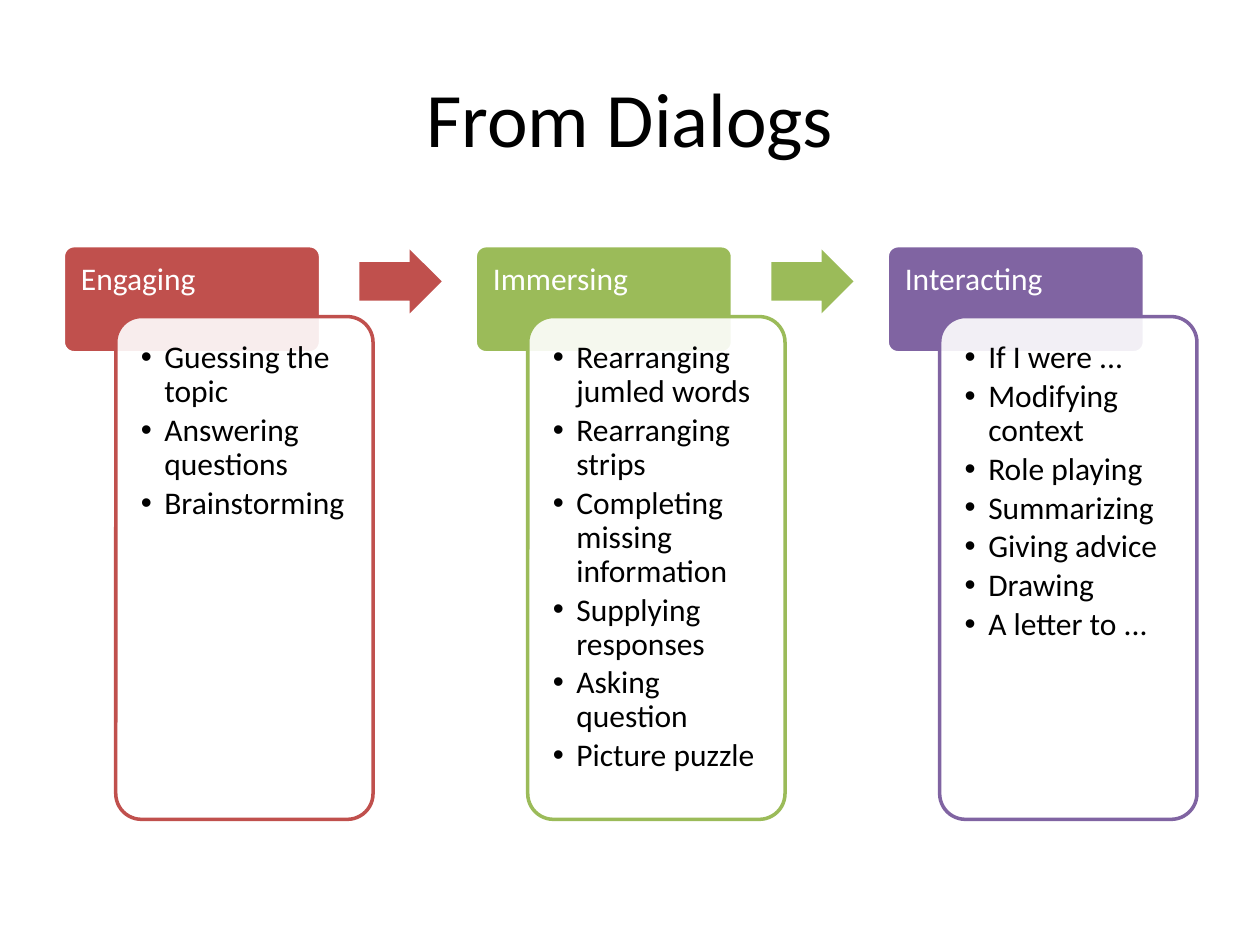
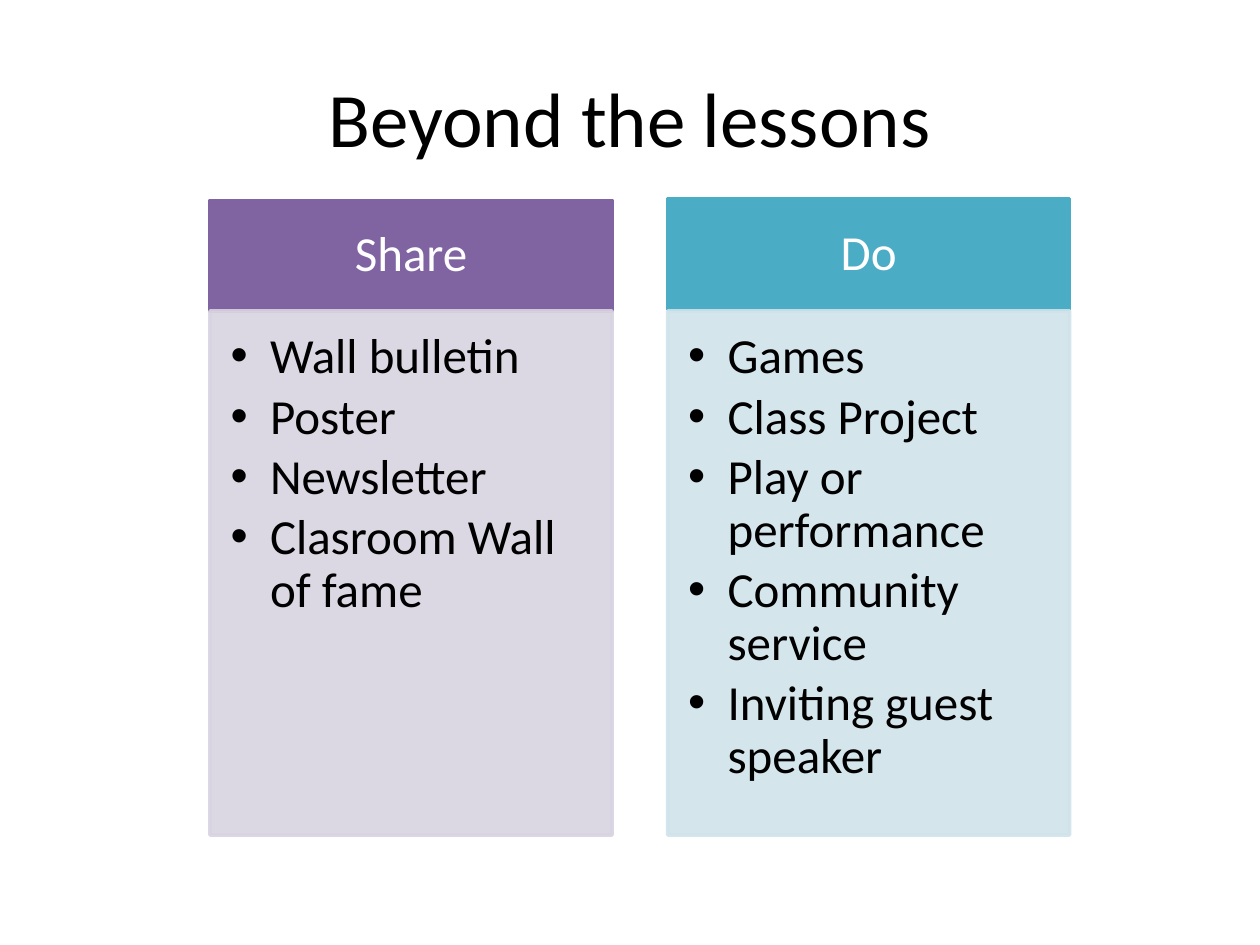
from dataclasses import dataclass
from typing import Optional

from lxml import etree
from pptx import Presentation
from pptx.dml.color import RGBColor
from pptx.enum.shapes import MSO_SHAPE
from pptx.enum.text import MSO_ANCHOR, PP_ALIGN
from pptx.oxml.ns import qn
from pptx.util import Pt

RECT = MSO_SHAPE.RECTANGLE
ROUND_RECT = MSO_SHAPE.ROUNDED_RECTANGLE
RIGHT_ARROW = MSO_SHAPE.RIGHT_ARROW
LEFT, CENTER = PP_ALIGN.LEFT, PP_ALIGN.CENTER
TOP, MIDDLE = MSO_ANCHOR.TOP, MSO_ANCHOR.MIDDLE


@dataclass(frozen=True)
class Theme:
    font: str = "Calibri"
    black: str = "000000"
    white: str = "FFFFFF"
    red: str = "C0504D"
    green: str = "9BBB59"
    purple: str = "8064A2"
    teal: str = "4BACC6"
    pale_purple: str = "D8D3E0"
    pale_teal: str = "D0E3EA"
    title_size: int = 44
    stage_size: int = 18
    list_size: int = 28
    line_width: int = 2
    opacity: int = 90


THEME = Theme()


@dataclass(frozen=True)
class Box:
    x: float
    y: float
    w: float
    h: float

    def lengths(self):
        return Pt(self.x), Pt(self.y), Pt(self.w), Pt(self.h)


@dataclass(frozen=True)
class Stage:
    name: str
    color: str
    items: list[str]


@dataclass(frozen=True)
class Panel:
    name: str
    color: str
    pale: str
    top: float
    items: list[str]


STAGES = [
    Stage("Engaging", THEME.red,
          ["Guessing the topic", "Answering questions", "Brainstorming"]),
    Stage("Immersing", THEME.green,
          ["Rearranging jumled words", "Rearranging strips",
           "Completing missing information", "Supplying responses",
           "Asking question", "Picture puzzle"]),
    Stage("Interacting", THEME.purple,
          ["If I were ...", "Modifying context", "Role playing", "Summarizing",
           "Giving advice", "Drawing", "A letter to ..."]),
]

PANELS = [
    Panel("Share", THEME.purple, THEME.pale_purple, 114.5,
          ["Wall bulletin", "Poster", "Newsletter", "Clasroom Wall of fame"]),
    Panel("Do", THEME.teal, THEME.pale_teal, 113.5,
          ["Games", "Class Project", "Play or performance",
           "Community service", "Inviting guest speaker"]),
]


def set_opacity(fill, percent: int) -> None:
    color = fill._xPr.find(qn("a:solidFill"))[0]
    etree.SubElement(color, qn("a:alpha"), val=str(percent * 1000))


def add_bullet(p, indent: float) -> None:
    pPr = p._p.get_or_add_pPr()
    pPr.set("marL", str(Pt(indent)))
    pPr.set("indent", str(-Pt(indent)))
    etree.SubElement(pPr, qn("a:buFont"), typeface="Arial")
    etree.SubElement(pPr, qn("a:buChar"), char="•")


def write(sp, lines: list[str], *, size: int, color: str = THEME.black,
          align=LEFT, anchor=TOP, insets=(7.2, 3.6, 7.2, 3.6),
          spacing: float = 0.9, after: float = 0, indent: float = 0) -> None:
    tf = sp.text_frame
    tf.word_wrap = True
    tf.vertical_anchor = anchor
    tf.margin_left, tf.margin_top, tf.margin_right, tf.margin_bottom = map(Pt, insets)
    for i, line in enumerate(lines):
        p = tf.add_paragraph() if i else tf.paragraphs[0]
        p.alignment = align
        p.line_spacing = spacing
        p.space_after = Pt(after)
        if indent:
            add_bullet(p, indent)
        r = p.add_run()
        r.text = line
        r.font.name = THEME.font
        r.font.size = Pt(size)
        r.font.color.rgb = RGBColor.from_string(color)


def add_box(s, kind, box: Box, fill: str, line: Optional[str] = None, *,
            adjustments=(), fill_opacity: int = 100, line_opacity: int = 100):
    sp = s.shapes.add_shape(kind, *box.lengths())
    sp.shadow.inherit = False
    for i, value in enumerate(adjustments):
        sp.adjustments[i] = value
    sp.fill.solid()
    sp.fill.fore_color.rgb = RGBColor.from_string(fill)
    if fill_opacity < 100:
        set_opacity(sp.fill, fill_opacity)
    if line is None:
        sp.line.fill.background()
        return sp
    sp.line.width = Pt(THEME.line_width)
    sp.line.color.rgb = RGBColor.from_string(line)
    if line_opacity < 100:
        color = sp.line._ln.find(qn("a:solidFill"))[0]
        etree.SubElement(color, qn("a:alpha"), val=str(line_opacity * 1000))
    return sp


def add_titled_slide(prs, title: str):
    s = prs.slides.add_slide(prs.slide_layouts[6])
    sp = s.shapes.add_textbox(*Box(36, 21.6, 648, 90).lengths())
    write(sp, [title], size=THEME.title_size, align=CENTER, anchor=MIDDLE, spacing=1)
    return s


def draw_stage(s, stage: Stage, x: float, has_next: bool) -> None:
    head = add_box(s, ROUND_RECT, Box(x, 140.4, 147, 61.2), stage.color,
                   THEME.white, adjustments=[0.1])
    write(head, [stage.name], size=THEME.stage_size, color=THEME.white,
          insets=(8.3, 8.3, 8.3, 5))
    body = add_box(s, ROUND_RECT, Box(x + 30, 180.9, 147, 287.3), THEME.white,
                   stage.color, adjustments=[0.1], fill_opacity=THEME.opacity)
    write(body, stage.items, size=THEME.stage_size, insets=(10, 10, 10, 10),
          after=2.7, indent=13.5)
    if has_next:
        add_box(s, RIGHT_ARROW, Box(x + 169.2, 142.5, 47, 36.6), stage.color,
                adjustments=[0.6, 0.5])


def draw_panel(s, panel: Panel, x: float) -> None:
    head = add_box(s, RECT, Box(x, panel.top, 229.8, 63.4), panel.color, panel.color)
    write(head, [panel.name], size=THEME.list_size, color=THEME.white, align=CENTER,
          anchor=MIDDLE, insets=(15.8, 8.6, 15.8, 8.6))
    body = add_box(s, RECT, Box(x, 177.7, 229.8, 299.5), panel.pale, panel.pale,
                   fill_opacity=THEME.opacity, line_opacity=THEME.opacity)
    write(body, panel.items, size=THEME.list_size, insets=(11.8, 11.8, 15.8, 17.3),
          after=4.2, indent=22.5)


def main() -> None:
    prs = Presentation()
    prs.slide_width, prs.slide_height = Pt(720), Pt(540)

    s = add_titled_slide(prs, "From Dialogs")
    for i, stage in enumerate(STAGES):
        draw_stage(s, stage, 36.2 + 235.4 * i, i < len(STAGES) - 1)

    s = add_titled_slide(prs, "Beyond the lessons")
    for i, panel in enumerate(PANELS):
        draw_panel(s, panel, 120 + 261.5 * i)

    prs.save("out.pptx")


if __name__ == "__main__":
    main()
